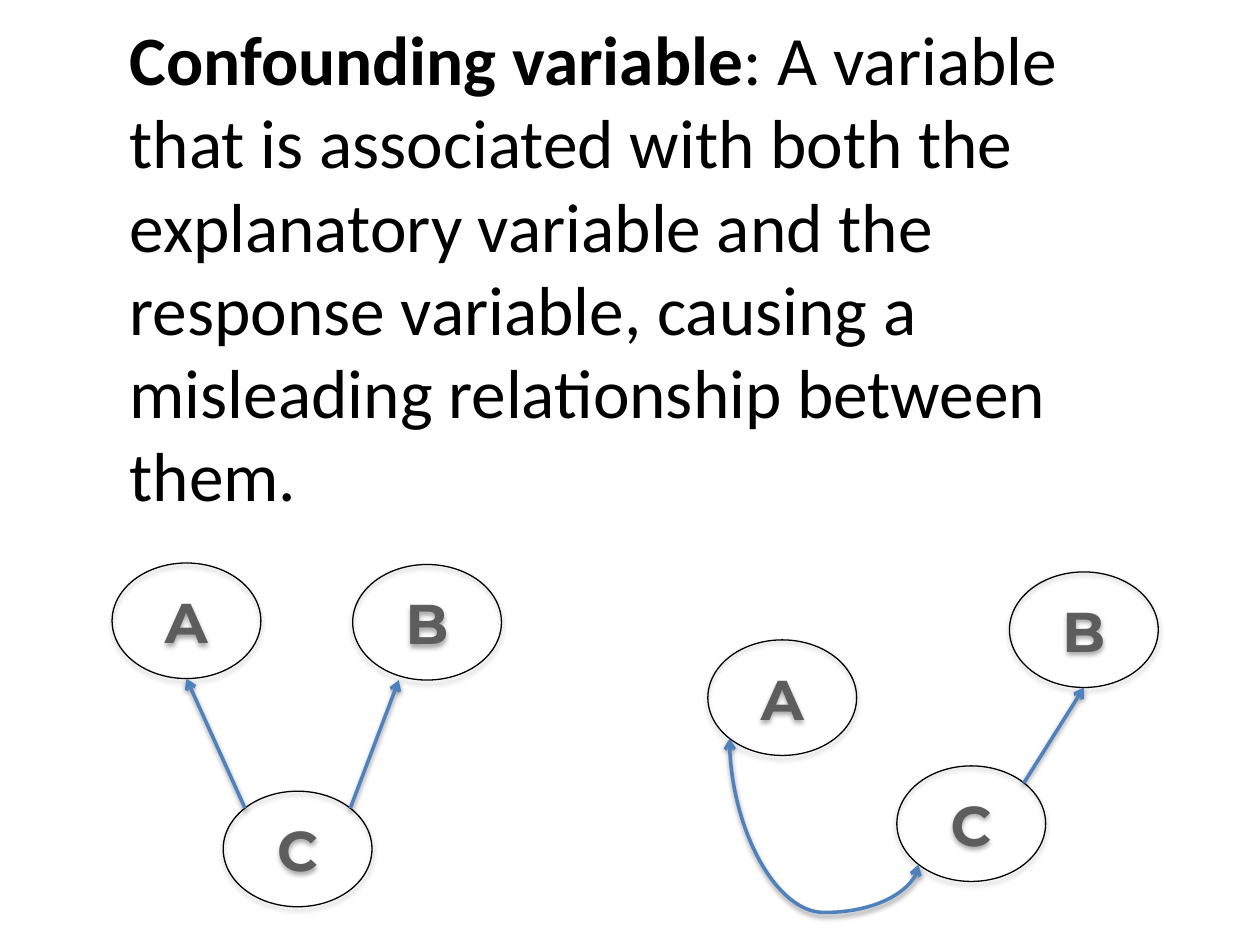
from lxml import etree
from pptx import Presentation
from pptx.dml.color import RGBColor
from pptx.enum.shapes import MSO_CONNECTOR, MSO_SHAPE
from pptx.enum.text import MSO_ANCHOR, MSO_AUTO_SIZE, PP_ALIGN
from pptx.oxml.ns import qn
from pptx.util import Cm, Pt

ELLIPSE = MSO_SHAPE.OVAL
STRAIGHT, CURVE = MSO_CONNECTOR.STRAIGHT, MSO_CONNECTOR.CURVE
MIDDLE = MSO_ANCHOR.MIDDLE
LEFT, CENTER = PP_ALIGN.LEFT, PP_ALIGN.CENTER

BLACK = RGBColor(0x00, 0x00, 0x00)
GRAY = RGBColor(0x5D, 0x5D, 0x5D)
BLUE = RGBColor(0x4F, 0x81, 0xBD)

NODE_W, NODE_H = 3.0, 2.33
# Points on an ellipse, as fractions of its width and height
NEAR, FAR = 0.146, 0.854
TOP_LEFT, TOP_RIGHT = (NEAR, NEAR), (FAR, NEAR)
BOTTOM_LEFT, BOTTOM = (NEAR, FAR), (0.5, 1)
BOTTOM_INNER = (0.31, 1)


def add_run(p, text, font="Calibri", size=39.6, color=BLACK, bold=False):
    r = p.add_run()
    r.text = text
    r.font.name, r.font.size, r.font.bold = font, Pt(size), bold
    r.font.color.rgb = color


def add_shadow(shape, dist, alpha):
    """Give the shape a soft shadow straight below it."""
    effects = etree.SubElement(shape._element.spPr, qn("a:effectLst"))
    shadow = etree.SubElement(effects, qn("a:outerShdw"), blurRad=str(Pt(3.1)),
                              dist=str(Pt(dist)), dir="5400000",
                              rotWithShape="0")
    color = etree.SubElement(shadow, qn("a:srgbClr"), val=str(BLACK))
    etree.SubElement(color, qn("a:alpha"), val=str(alpha * 1000))


def point(node, place):
    """Return a point of a node, in cm, from its fractions of width and height."""
    return (node.left.cm + place[0] * node.width.cm,
            node.top.cm + place[1] * node.height.cm)


class Diagram:
    def __init__(self, s):
        self.s = s

    def title(self, x, y, w, h, parts):
        sp = self.s.shapes.title
        sp.left, sp.top, sp.width, sp.height = Cm(x), Cm(y), Cm(w), Cm(h)
        tf = sp.text_frame
        tf.auto_size, tf.vertical_anchor = MSO_AUTO_SIZE.NONE, MIDDLE
        p = tf.paragraphs[0]
        p.alignment = LEFT
        for text, bold in parts:
            add_run(p, text, bold=bold)

    def node(self, letter, x, y):
        sp = self.s.shapes.add_shape(ELLIPSE, Cm(x), Cm(y),
                                     Cm(NODE_W), Cm(NODE_H))
        sp.fill.background()
        sp.line.color.rgb, sp.line.width = BLACK, Pt(0.75)
        add_shadow(sp, 1.8, 35)
        tf = sp.text_frame
        tf.vertical_anchor = MIDDLE
        p = tf.paragraphs[0]
        p.alignment = CENTER
        add_run(p, letter, font="Montserrat", size=32, color=GRAY, bold=True)
        return sp

    def arrow(self, start, end, kind=STRAIGHT, ends=("tailEnd",)):
        cx = self.s.shapes.add_connector(kind, *map(Cm, start + end))
        cx.line.color.rgb, cx.line.width = BLUE, Pt(2)
        ln = cx.line._get_or_add_ln()
        for tag in ends:
            etree.SubElement(ln, qn(f"a:{tag}"), type="arrow")
        add_shadow(cx, 1.6, 38)
        return cx

    def hanging_arrow(self, start, end, depth):
        """Draw a two-headed curve that dips to depth times its own height."""
        (x1, y1), (x2, y2) = start, end
        w, h = y2 - y1, x2 - x1
        left, top = (x1 + x2 - w) / 2, (y1 + y2 - h) / 2
        cx = self.arrow((left, top), (left + w, top + h), CURVE,
                        ("headEnd", "tailEnd"))
        spPr = cx._element.spPr
        xfrm = spPr.find(qn("a:xfrm"))
        xfrm.set("rot", "16200000")
        xfrm.set("flipH", "1")
        guides = spPr.find(qn("a:prstGeom")).find(qn("a:avLst"))
        etree.SubElement(guides, qn("a:gd"), name="adj1",
                         fmla=f"val {round(depth * 100000)}")


def main():
    prs = Presentation()
    prs.slide_width, prs.slide_height = Cm(25.4), Cm(19.05)
    d = Diagram(prs.slides.add_slide(prs.slide_layouts[5]))

    d.title(2.36, 0.13, 20.09, 10.46, [
        ("Confounding variable", True),
        (": A variable that is associated with both the explanatory variable "
         "and the response variable, causing a misleading relationship "
         "between them.", False)])

    c = d.node("C", 18.08, 15.44)
    a = d.node("A", 14.27, 12.9)
    b = d.node("B", 20.35, 11.53)
    d.hanging_arrow(point(a, BOTTOM_LEFT), point(c, BOTTOM_LEFT), 1.38)
    d.arrow(point(c, TOP_RIGHT), point(b, BOTTOM))

    c = d.node("C", 4.5, 15.95)
    a = d.node("A", 2.26, 11.35)
    b = d.node("B", 7.11, 11.38)
    d.arrow(point(c, TOP_LEFT), point(a, BOTTOM))
    d.arrow(point(c, TOP_RIGHT), point(b, BOTTOM_INNER))

    prs.save("out.pptx")


if __name__ == "__main__":
    main()
